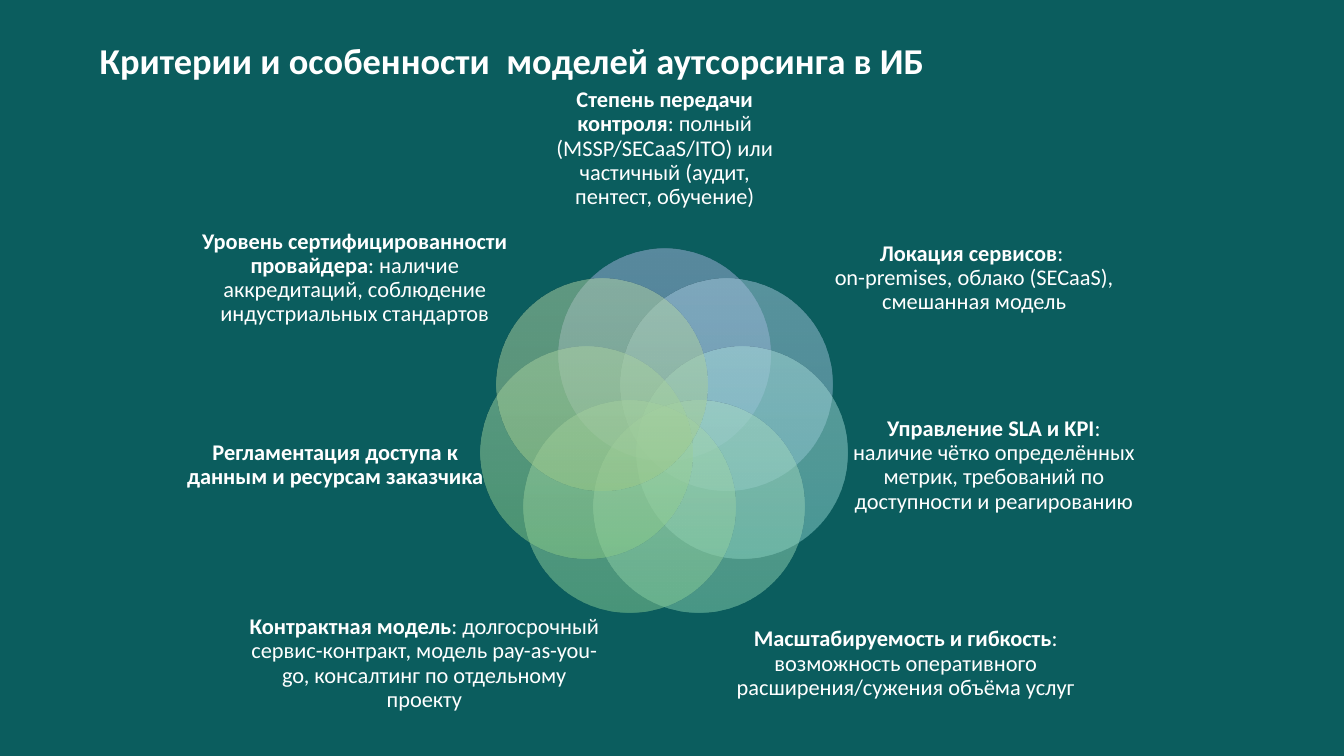
from copy import deepcopy
from math import cos, pi, sin

from lxml import etree
from pptx import Presentation
from pptx.dml.color import RGBColor
from pptx.enum.shapes import MSO_SHAPE
from pptx.enum.text import MSO_ANCHOR, MSO_AUTO_SIZE, PP_ALIGN
from pptx.oxml.ns import qn
from pptx.util import Pt

OVAL = MSO_SHAPE.OVAL
MIDDLE = MSO_ANCHOR.MIDDLE
NO_AUTOFIT = MSO_AUTO_SIZE.NONE
LEFT, CENTER = PP_ALIGN.LEFT, PP_ALIGN.CENTER

TEAL = RGBColor(0x0B, 0x5D, 0x5E)
WHITE = RGBColor(0xFF, 0xFF, 0xFF)

TITLE = "Критерии и особенности  моделей аутсорсинга в ИБ"
TITLE_BOX = (64, 13.7, 733.7, 61.9)

CRITERIA = [
    ("Степень передачи контроля",
     [": полный (MSSP/SECaaS/ITO) или частичный (аудит, пентест, обучение)"],
     (388.1, 59.8, 173.5, 92.9), ("A8B7DF", "9AABD9", "889ED7")),
    ("Локация сервисов",
     [": ", "on-premises, облако (SECaaS), смешанная модель"],
     (581, 147.6, 229.7, 102.2), ("A8CADE", "9AC1D7", "88B9D5")),
    ("Управление SLA и KPI",
     [": наличие чётко определённых метрик, требований по доступности и реагированию"],
     (607, 277.9, 205.9, 109.4), ("A8DCD9", "9AD5D2", "87D3CF")),
    ("Масштабируемость и гибкость",
     [": возможность оперативного расширения/сужения объёма услуг"],
     (506.2, 424.1, 281.5, 100.1), ("A8DAC3", "9AD4B9", "87D1AF")),
    ("Контрактная модель",
     [": долгосрочный сервис-контракт, модель pay-as-you-go, "
      "консалтинг по отдельному проекту"],
     (175, 424.1, 256.3, 100.1), ("A7D8B1", "9AD2A5", "87CE96")),
    ("Регламентация доступа к данным и ресурсам заказчика",
     [],
     (131.8, 277.9, 215.3, 109.4), ("A9D7A7", "9CD09A", "8ACC87")),
    ("Уровень сертифицированности провайдера",
     [": наличие аккредитаций, соблюдение индустриальных стандартов"],
     (133.9, 147.6, 239, 102.2), ("B5D5A7", "AACE9A", "9CC987")),
]

RING_X, RING_Y, RING_RADIUS = 474.5, 310.5, 57
DIAMETER = 151.2
OPACITY = 50


def set_format(target, values):
    for name, value in values.items():
        setattr(target, name, value)


def add_span(para, text, size, bold):
    span = para.add_run()
    span.text = text
    set_format(span.font, {"name": "Calibri", "size": Pt(size), "bold": bold})
    span.font.color.rgb = WHITE
    return span


def fill_gradient(shape, colours):
    shape.fill.gradient()
    shape.fill.gradient_angle = 270
    stops = shape._element.spPr.find(qn("a:gradFill")).find(qn("a:gsLst"))
    for stop in list(stops):
        stops.remove(stop)
    for index, colour in enumerate(colours):
        stop = etree.SubElement(stops, qn("a:gs"), pos=str(index * 50000))
        tone = etree.SubElement(stop, qn("a:srgbClr"), val=colour)
        etree.SubElement(tone, qn("a:alpha"), val=str(OPACITY * 1000))


def add_circle(page, index, colours):
    angle = 2 * pi * index / len(CRITERIA)
    left = RING_X + RING_RADIUS * sin(angle) - DIAMETER / 2
    top = RING_Y - RING_RADIUS * cos(angle) - DIAMETER / 2
    circle = page.shapes.add_shape(OVAL, Pt(left), Pt(top), Pt(DIAMETER), Pt(DIAMETER))
    circle.shadow.inherit = False
    circle.line.fill.background()
    fill_gradient(circle, colours)


def add_label(page, heading, details, bounds):
    box = page.shapes.add_textbox(*map(Pt, bounds))
    set_format(box.text_frame, {
        "word_wrap": True, "vertical_anchor": MIDDLE,
        "margin_left": 0, "margin_top": 0, "margin_right": 0, "margin_bottom": 0,
    })
    para = box.text_frame.paragraphs[0]
    set_format(para, {"alignment": CENTER, "line_spacing": 0.9})
    span = add_span(para, heading, 16, True)
    for index, detail in enumerate(details):
        if index:
            para.add_line_break()
            para._p.findall(qn("a:br"))[-1].append(deepcopy(span._r.rPr))
        span = add_span(para, detail, 16, False)


def main():
    deck = Presentation()
    set_format(deck, {"slide_width": Pt(960), "slide_height": Pt(540)})
    page = deck.slides.add_slide(deck.slide_layouts[5])
    page.background.fill.solid()
    page.background.fill.fore_color.rgb = TEAL

    title = page.shapes.title
    set_format(title, dict(zip(("left", "top", "width", "height"), map(Pt, TITLE_BOX))))
    set_format(title.text_frame, {
        "word_wrap": True, "vertical_anchor": MIDDLE, "auto_size": NO_AUTOFIT})
    para = title.text_frame.paragraphs[0]
    set_format(para, {"alignment": LEFT, "line_spacing": 0.9})
    add_span(para, TITLE, 26, True)

    for index, (heading, details, bounds, colours) in enumerate(CRITERIA):
        add_circle(page, index, colours)
        add_label(page, heading, details, bounds)

    deck.save("out.pptx")


if __name__ == "__main__":
    main()
